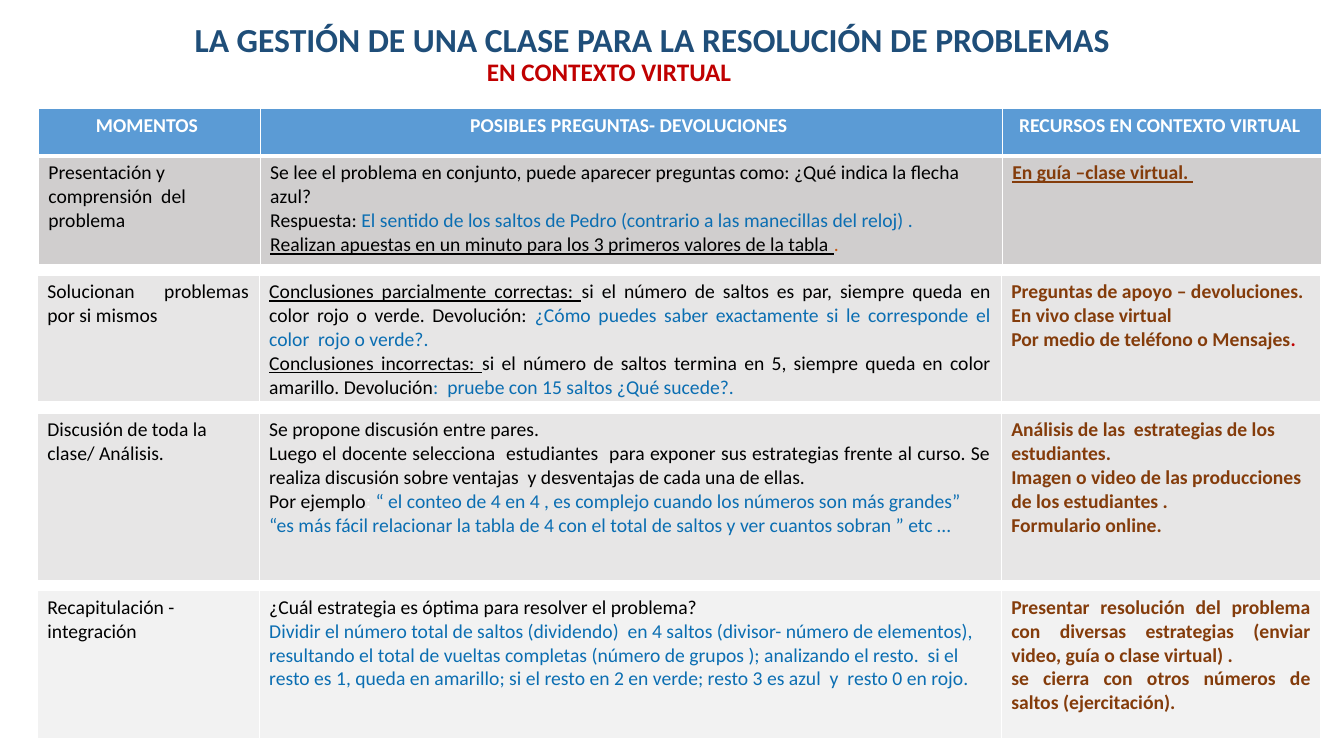
from lxml.etree import SubElement
from pptx import Presentation
from pptx.dml.color import RGBColor
from pptx.enum.text import MSO_ANCHOR, PP_ALIGN
from pptx.oxml.ns import qn
from pptx.util import Pt

PX = 9144
FONT = "Calibri"
COLORS = {
    "white": "FFFFFF", "black": "000000", "navy": "1F4E79", "red": "C00000",
    "header": "5B9BD5", "dark": "D0CECE", "middle": "E7E6E6", "light": "F2F2F2",
    "blue": "0B6EB2", "brown": "843C0B", "orange": "C55A11",
}
STYLES = {
    "plain": ("black", False, False),
    "under": ("black", False, True),
    "answer": ("blue", False, False),
    "dot": ("orange", False, False),
    "colon": ("white", False, False),
    "head": ("white", True, False),
    "resource": ("brown", True, False),
    "link": ("brown", True, True),
    "alert": ("red", True, False),
}
COLUMNS = (220, 736, 317)
LEFT, CENTER, JUSTIFY = PP_ALIGN.LEFT, PP_ALIGN.CENTER, PP_ALIGN.JUSTIFY

HEADER = ("header", 47, 3, [
    (CENTER, [[("head", "MOMENTOS ")]]),
    (CENTER, [[("head", "POSIBLES PREGUNTAS- DEVOLUCIONES ")]]),
    (CENTER, [[("head", "RECURSOS EN CONTEXTO VIRTUAL ")]]),
])
PRESENTATION = ("dark", 108, 1, [
    (LEFT, [[("plain", "Presentación y comprensión  del problema")]]),
    (LEFT, [
        [("plain", "Se lee el problema en conjunto, puede aparecer preguntas como: ¿Qué indica la flecha azul?")],
        [("plain", "Respuesta: "),
         ("answer", "El sentido de los saltos de Pedro (contrario a las manecillas del reloj) .")],
        [("under", "Realizan apuestas en un minuto para los 3 primeros valores de la tabla "), ("dot", ".")],
    ]),
    (LEFT, [[("link", "En guía –clase virtual. ")]]),
])
SOLUTION = ("middle", 127, 3, [
    (JUSTIFY, [[("plain", "Solucionan problemas por si mismos")]]),
    (JUSTIFY, [
        [("under", "Conclusiones parcialmente correctas: "),
         ("plain", "si el número de saltos es par, siempre queda en color rojo o verde. Devolución: "),
         ("answer", "¿Cómo puedes saber exactamente si le corresponde el color  rojo o verde?.")],
        [("under", "Conclusiones incorrectas: "),
         ("plain", "si el número de saltos termina en 5, siempre queda en color amarillo. Devolución"),
         ("answer", ":  pruebe con 15 saltos ¿Qué sucede?. ")],
    ]),
    (JUSTIFY, [
        [("resource", "Preguntas de apoyo – devoluciones. ")],
        [("resource", "En vivo clase virtual")],
        [("resource", "Por medio de teléfono o Mensajes"), ("alert", ". ")],
    ]),
])
DISCUSSION = ("middle", 167, 3, [
    (LEFT, [[("plain", "Discusión de toda la clase/ Análisis.")]]),
    (JUSTIFY, [
        [("plain", "Se propone discusión entre pares. ")],
        [("plain", "Luego el docente selecciona  estudiantes  para exponer sus estrategias frente al curso. "
                   "Se realiza discusión sobre ventajas  y desventajas de cada una de ellas. ")],
        [("plain", "Por ejemplo"), ("colon", ": "),
         ("answer", "“ el conteo de 4 en 4 , es complejo cuando los números son más grandes”")],
        [("answer", "“es más fácil relacionar la tabla de 4 con el total de saltos y ver cuantos sobran ” etc …")],
    ]),
    (LEFT, [
        [("resource", "Análisis de las  estrategias de los estudiantes.")],
        [("resource", "Imagen o video de las producciones de los estudiantes .")],
        [("resource", "Formulario online.")],
    ]),
])
RECAP = ("light", 148, 3, [
    (LEFT, [[("plain", "Recapitulación - integración")]]),
    (LEFT, [
        [("plain", "¿Cuál estrategia es óptima para resolver el problema?")],
        [("answer", "Dividir el número total de saltos (dividendo)  en 4 saltos (divisor- número de elementos), "
                    "resultando el total de vueltas completas (número de grupos ); analizando el resto.  "
                    "si el resto es 1, queda en amarillo; si el resto en 2 en verde; "
                    "resto 3 es azul  y  resto 0 en rojo.")],
    ]),
    (JUSTIFY, [
        [("resource", "Presentar resolución del problema con diversas estrategias "
                      "(enviar video, guía o clase virtual) .")],
        [("resource", "se cierra con otros números de saltos (ejercitación).  ")],
    ]),
])


def color(name):
    return RGBColor.from_string(COLORS[name])


def place(shape, left, top, width, height):
    shape.left, shape.top = left * PX, top * PX
    shape.width, shape.height = width * PX, height * PX


def write_heading(frame, text, size, ink):
    para = frame.paragraphs[0]
    span = para.add_run()
    span.text = text
    font = span.font
    font.name, font.size, font.bold = FONT, Pt(size), True
    font.color.rgb = color(ink)
    return para


def add_headings(page, left, top):
    title = page.shapes.title
    place(title, left, top, 1039, 52)
    title.text_frame.vertical_anchor = MSO_ANCHOR.MIDDLE
    para = write_heading(title.text_frame, "LA GESTIÓN DE UNA CLASE PARA LA RESOLUCIÓN DE PROBLEMAS ", 24, "navy")
    para.alignment = JUSTIFY
    para.line_spacing = 0.9
    box = page.shapes.add_textbox(0, 0, 0, 0)
    place(box, left + 290, top + 36, 307, 40)
    box.text_frame.word_wrap = True
    write_heading(box.text_frame, "EN CONTEXTO VIRTUAL", 18, "red")


def set_borders(cell, bottom):
    properties = cell._tc.get_or_add_tcPr()
    for side, width in (("L", 1), ("R", 1), ("T", 1), ("B", bottom)):
        line = SubElement(properties, qn("a:ln" + side), w=str(Pt(width)))
        fill = SubElement(line, qn("a:solidFill"))
        SubElement(fill, qn("a:srgbClr"), val=COLORS["white"])


def fill_cell(cell, fill, bottom, alignment, paragraphs):
    set_borders(cell, bottom)
    cell.fill.solid()
    cell.fill.fore_color.rgb = color(fill)
    frame = cell.text_frame
    for index, spans in enumerate(paragraphs):
        para = frame.add_paragraph() if index else frame.paragraphs[0]
        para.alignment = alignment
        for style, text in spans:
            span = para.add_run()
            span.text = text
            ink, bold, underline = STYLES[style]
            font = span.font
            font.name, font.size = FONT, Pt(14)
            font.bold, font.underline = bold, underline
            font.color.rgb = color(ink)


def add_moment(page, left, top, rows):
    height = sum(row[1] for row in rows)
    frame = page.shapes.add_table(len(rows), len(COLUMNS), left * PX, top * PX, sum(COLUMNS) * PX, height * PX)
    table = frame.table
    table.first_row = table.horz_banding = False
    for column, width in zip(table.columns, COLUMNS):
        column.width = width * PX
    for row, (fill, row_height, bottom, contents) in zip(table.rows, rows):
        row.height = row_height * PX
        for cell, (alignment, paragraphs) in zip(row.cells, contents):
            fill_cell(cell, fill, bottom, alignment, paragraphs)


def main():
    deck = Presentation()
    deck.slide_width, deck.slide_height = 1333 * PX, 750 * PX
    page = deck.slides.add_slide(deck.slide_layouts[5])
    add_headings(page, 183, 15)
    add_moment(page, 38, 108, [HEADER, PRESENTATION])
    for top, row in ((273, SOLUTION), (410, DISCUSSION), (586, RECAP)):
        add_moment(page, 37, top, [row])
    deck.save("out.pptx")


if __name__ == "__main__":
    main()
